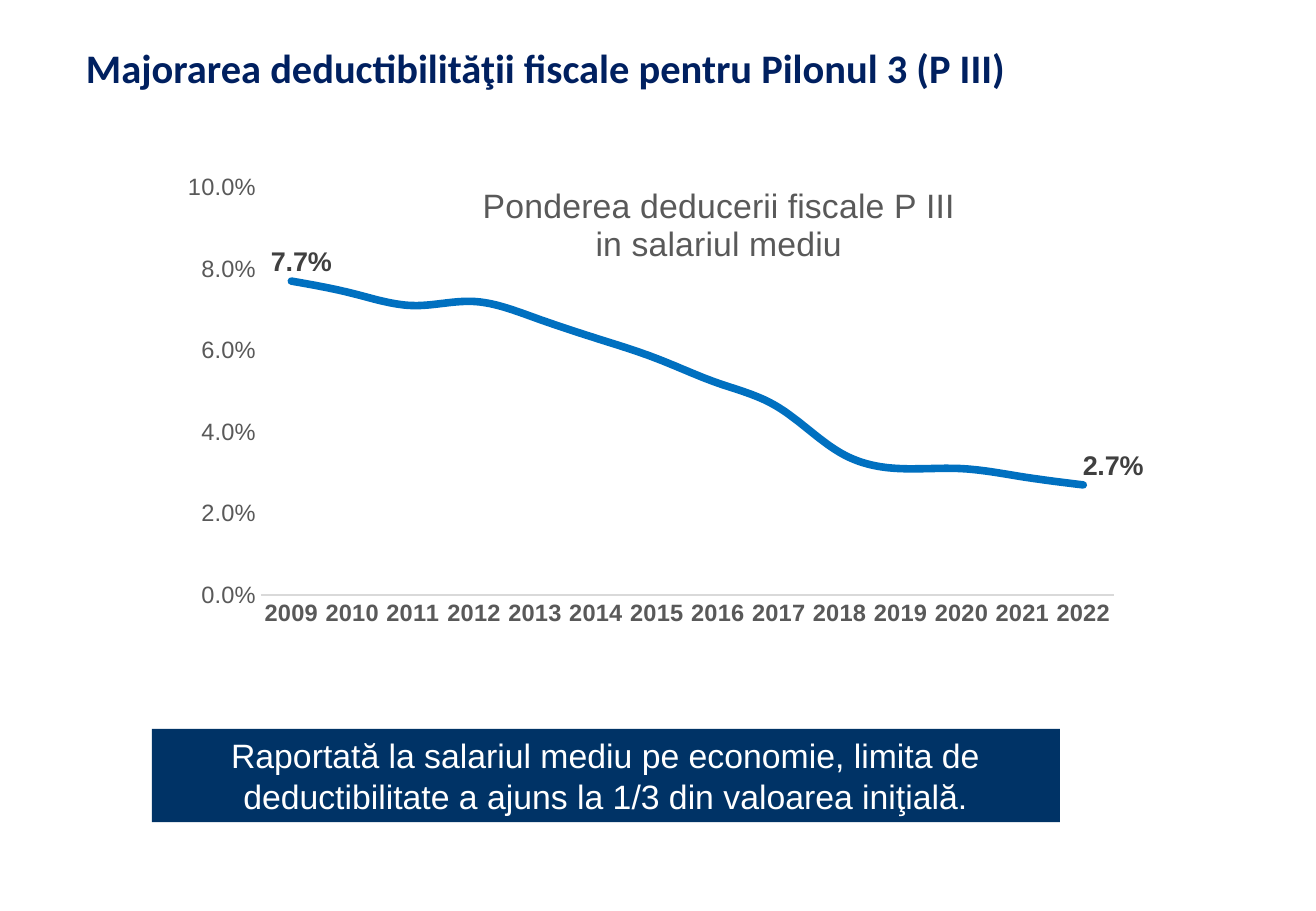
from lxml import etree
from pptx import Presentation
from pptx.chart.data import CategoryChartData
from pptx.dml.color import RGBColor
from pptx.enum.chart import XL_CHART_TYPE as ChartType, XL_LABEL_POSITION as LabelPosition, XL_TICK_MARK as TickMark
from pptx.enum.shapes import MSO_SHAPE as Shape
from pptx.enum.text import MSO_ANCHOR as Anchor, PP_ALIGN as Align
from pptx.oxml.ns import qn
from pptx.util import Inches, Pt

TITLE_NAVY = RGBColor(0x00, 0x20, 0x60)
BANNER_NAVY = RGBColor(0x00, 0x33, 0x66)
LINE_BLUE = RGBColor(0x00, 0x70, 0xC0)
AXIS_GRAY = RGBColor(0x59, 0x59, 0x59)
LABEL_GRAY = RGBColor(0x40, 0x40, 0x40)
RULE_GRAY = RGBColor(0xD9, 0xD9, 0xD9)
WHITE = RGBColor(0xFF, 0xFF, 0xFF)


def write_text(frame, text, size, color, font="Arial", bold=False, align=Align.LEFT):
    frame.word_wrap = True
    frame.vertical_anchor = Anchor.MIDDLE
    for number, line in enumerate(text.split("\n")):
        paragraph = frame.add_paragraph() if number else frame.paragraphs[0]
        paragraph.alignment = align
        run = paragraph.add_run()
        run.text = line
        run.font.name, run.font.size, run.font.bold = font, Pt(size), bold
        run.font.color.rgb = color


def set_layout(element, index, **settings):
    old_layout = element.find(qn("c:layout"))
    if old_layout is not None:
        element.remove(old_layout)
    layout = etree.Element(qn("c:layout"))
    manual = etree.SubElement(layout, qn("c:manualLayout"))
    for name, value in settings.items():
        etree.SubElement(manual, qn(f"c:{name}")).set("val", str(value))
    element.insert(index, layout)


presentation = Presentation()
presentation.slide_width = Inches(10.84)
presentation.slide_height = Inches(7.5)
slide = presentation.slides.add_slide(presentation.slide_layouts[6])

# Slide title
title = slide.shapes.add_textbox(Inches(0.61), Inches(0.17), Inches(9.62), Inches(0.77))
write_text(title.text_frame, "Majorarea deductibilităţii fiscale pentru Pilonul 3 (P III)",
           size=24, color=TITLE_NAVY, font="Calibri", bold=True)

# Line chart
data = CategoryChartData(number_format="0.0%")
data.categories = [str(year) for year in range(2009, 2023)]
data.add_series("Series 1", [0.077, 0.074, 0.071, 0.072, 0.068, 0.063, 0.058,
                             0.052, 0.046, 0.035, 0.031, 0.031, 0.029, 0.027])
chart = slide.shapes.add_chart(ChartType.LINE, Inches(1.25), Inches(1.33),
                               Inches(8.17), Inches(4.25), data).chart
chart.has_legend = False
chart.font.name, chart.font.size = "Arial", Pt(10)
plot = chart.plots[0]
plot.vary_by_categories = False
set_layout(chart._chartSpace.chart.plotArea, 0, layoutTarget="inner",
           xMode="edge", yMode="edge", x=0.11, y=0.05, w=0.86, h=0.79)

# Chart title, laid over the plot
chart.has_title = True
chart_title = chart.chart_title
write_text(chart_title.text_frame, "Ponderea deducerii fiscale P III\nin salariul mediu",
           size=20, color=AXIS_GRAY, align=Align.CENTER)
set_layout(chart_title._element, 1, xMode="edge", yMode="edge", x=0.33, y=0.04)
chart_title._element.find(qn("c:overlay")).set("val", "1")

# Axes
for axis, bold in ((chart.category_axis, True), (chart.value_axis, False)):
    axis.has_major_gridlines = False
    axis.major_tick_mark = axis.minor_tick_mark = TickMark.NONE
    font = axis.tick_labels.font
    font.name, font.size, font.bold = "Arial", Pt(14), bold
    font.color.rgb = AXIS_GRAY
chart.category_axis.format.line.color.rgb = RULE_GRAY
chart.category_axis.format.line.width = Pt(0.75)
value_axis = chart.value_axis
value_axis.format.line.fill.background()
value_axis.minimum_scale, value_axis.maximum_scale = 0, 0.1
value_axis.major_unit = 0.02
value_axis.tick_labels.number_format = "0.0%"
value_axis.tick_labels.number_format_is_linked = False

# Series line, labelled at its two ends
series = plot.series[0]
series.smooth = True
series.format.line.color.rgb = LINE_BLUE
series.format.line.width = Pt(4.5)
series.format.line._get_or_add_ln().set("cap", "rnd")
series.data_labels.show_value = False
for point, shift in ((0, 0.01), (13, 0.03)):
    label = series.points[point].data_label
    label.font.name, label.font.size, label.font.bold = "Arial", Pt(16), True
    label.font.color.rgb = LABEL_GRAY
    label.position = LabelPosition.ABOVE
    set_layout(series.data_labels._element.findall(qn("c:dLbl"))[-1], 1, x=shift, y=0)

# Conclusion banner
banner = slide.shapes.add_shape(Shape.RECTANGLE, Inches(1.25), Inches(6), Inches(7.48), Inches(0.77))
banner.shadow.inherit = False
banner.fill.solid()
banner.fill.fore_color.rgb = BANNER_NAVY
banner.line.fill.background()
write_text(banner.text_frame,
           "Raportată la salariul mediu pe economie, limita de deductibilitate "
           "a ajuns la 1/3 din valoarea iniţială.",
           size=20, color=WHITE, align=Align.CENTER)

presentation.save("out.pptx")
